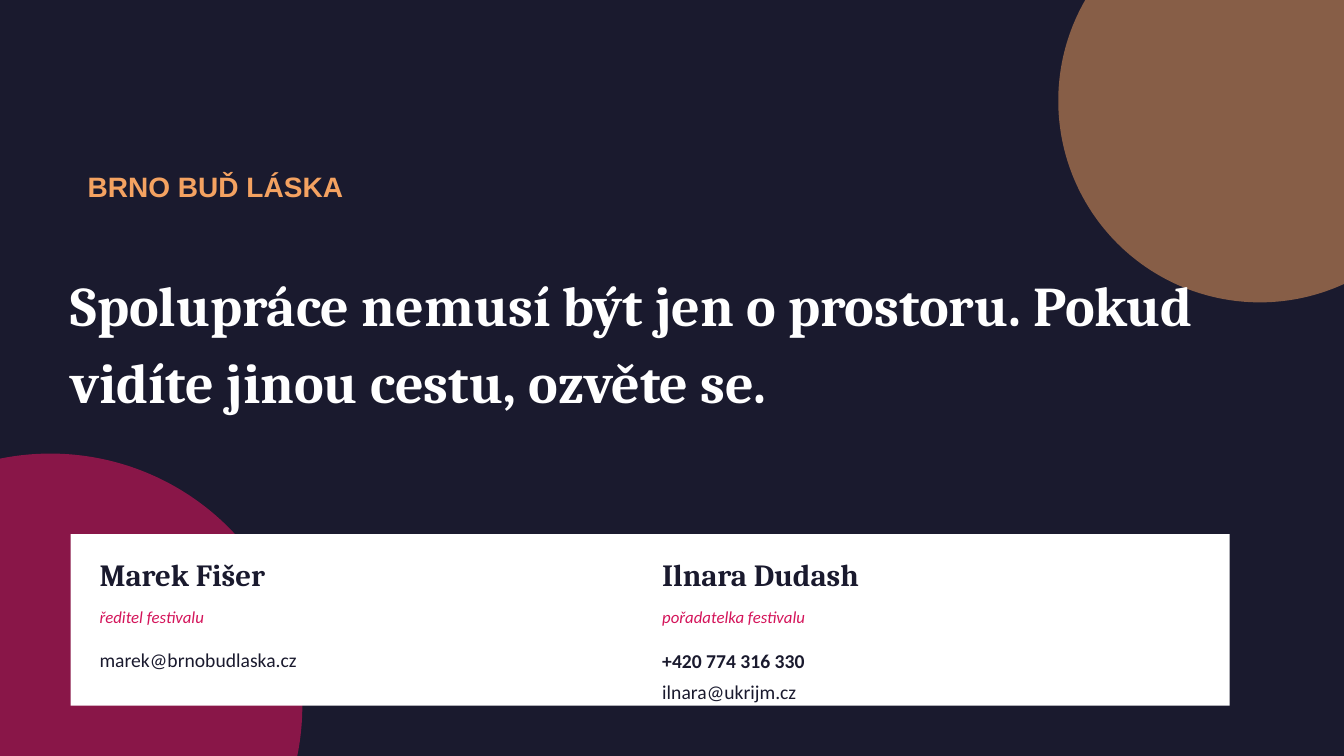
from lxml import etree
from pptx import Presentation
from pptx.dml.color import RGBColor
from pptx.enum import shapes, text
from pptx.oxml.ns import qn
from pptx.util import Cm, Pt

NAVY, ORANGE, PINK, WHITE = "1A1A2E", "F4A261", "D4145A", "FFFFFF"


def color(value):
    return RGBColor.from_string(value)


def write(lines, left, top, width, height, *, size, font, fill,
          bold=(False,), italic=False, spacing=None):
    """Add a text box; bold holds one flag per line."""
    box = page.shapes.add_textbox(Cm(left), Cm(top), Cm(width), Cm(height))
    frame = box.text_frame
    frame.word_wrap = True
    frame.vertical_anchor = text.MSO_ANCHOR.MIDDLE
    frame.margin_left = frame.margin_right = 0
    frame.margin_top = frame.margin_bottom = 0
    for index, line in enumerate(lines):
        para = frame.add_paragraph() if index else frame.paragraphs[0]
        if spacing:
            para.line_spacing = spacing
        span = para.add_run()
        span.text = line
        span.font.size = Pt(size)
        span.font.name = font
        span.font.bold = bold[index]
        span.font.italic = italic
        span.font.color.rgb = color(fill)


deck = Presentation()
deck.slide_width, deck.slide_height = Cm(33.87), Cm(19.05)
page = deck.slides.add_slide(deck.slide_layouts[6])
page.background.fill.solid()
page.background.fill.fore_color.rgb = color(NAVY)

# Translucent corner circles and the white contact card, opacity in percent
OVAL, RECTANGLE = shapes.MSO_SHAPE.OVAL, shapes.MSO_SHAPE.RECTANGLE
for kind, left, top, width, height, fill, opacity in (
    (OVAL, -5.08, 11.43, 12.7, 12.7, PINK, 60),
    (OVAL, 26.67, -2.54, 10.16, 10.16, ORANGE, 50),
    (RECTANGLE, 1.78, 13.46, 29.21, 4.32, WHITE, 100),
):
    shape = page.shapes.add_shape(kind, Cm(left), Cm(top), Cm(width), Cm(height))
    shape.shadow.inherit = False
    shape.line.fill.background()
    shape.fill.solid()
    shape.fill.fore_color.rgb = color(fill)
    if opacity < 100:
        tint = shape.fill._xPr.find(".//" + qn("a:srgbClr"))
        etree.SubElement(tint, qn("a:alpha"), val=str(opacity * 1000))

# Festival name and headline
write(["BRNO BUĎ LÁSKA"], 2.21, 4.19, 20.32, 1.02,
      size=20, font="Arial", fill=ORANGE, bold=(True,))
write(["Spolupráce nemusí být jen o prostoru. Pokud vidíte jinou cestu, ozvěte se."],
      1.78, 6.22, 30.48, 4.57,
      size=40, font="Cambria", fill=WHITE, bold=(True,), spacing=1.15)

# Contacts
for left, name, role, details, bold, details_top in (
    (2.51, "Marek Fišer", "ředitel festivalu",
     ["marek@brnobudlaska.cz"], (False,), 15.72),
    (16.69, "Ilnara Dudash", "pořadatelka festivalu",
     ["+420 774 316 330", "ilnara@ukrijm.cz"], (True, False), 16.13),
):
    write([name], left, 13.84, 15.24, 1.27,
          size=22, font="Cambria", fill=NAVY, bold=(True,))
    write([role], left, 15.11, 15.24, 0.89,
          size=12, font="Calibri", fill=PINK, italic=True)
    write(details, left, details_top, 15.24, 1.65,
          size=14, font="Calibri", fill=NAVY, bold=bold, spacing=1.3)

deck.save("out.pptx")
